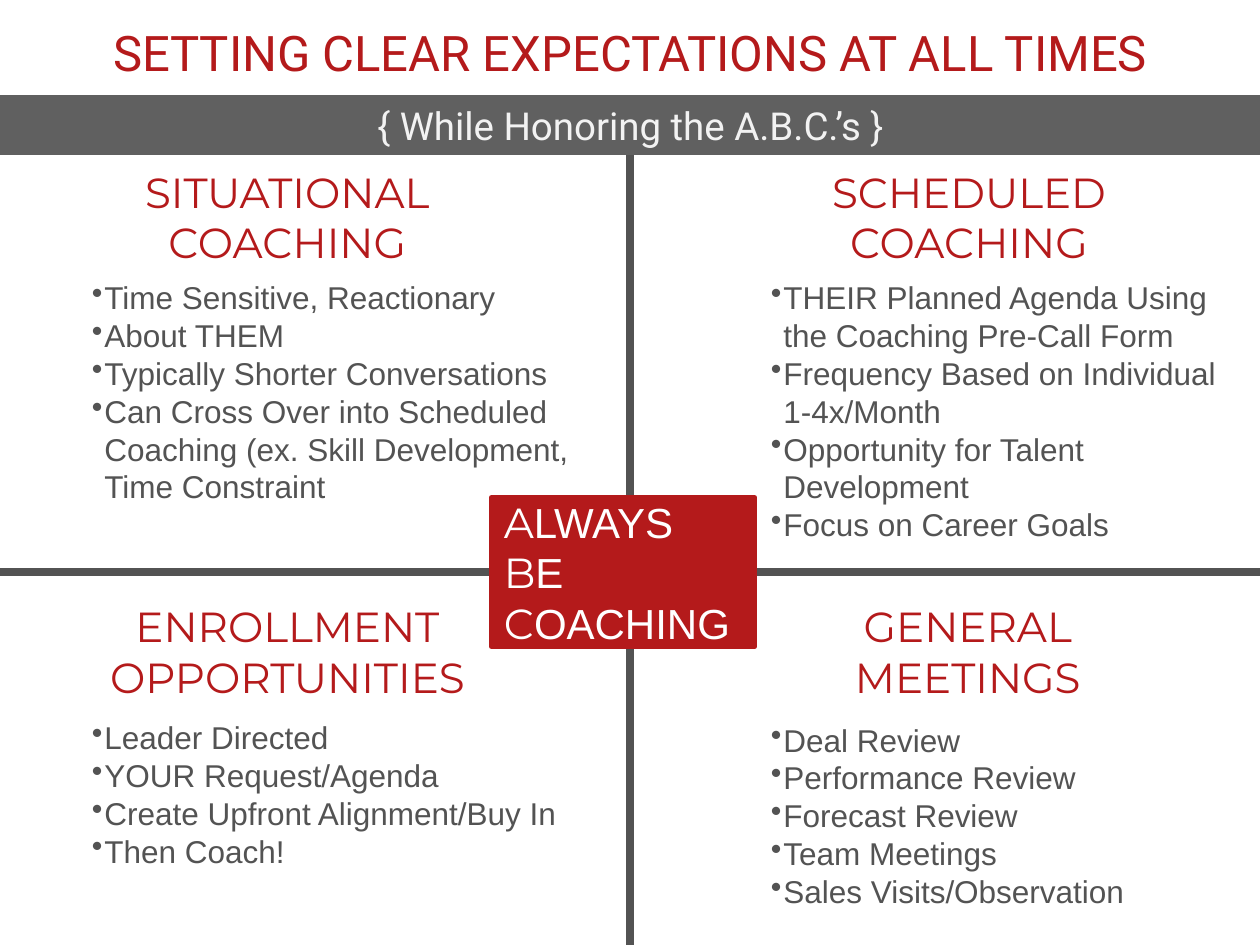
import lxml.etree
import pptx
import pptx.dml.color
import pptx.enum.shapes
import pptx.enum.text
import pptx.oxml.ns
import pptx.util
from dataclasses import dataclass

Pt = pptx.util.Pt
MSO_SHAPE = pptx.enum.shapes.MSO_SHAPE
ALIGN = pptx.enum.text.PP_ALIGN
ANCHOR = pptx.enum.text.MSO_ANCHOR
RGB = pptx.dml.color.RGBColor.from_string
qn = pptx.oxml.ns.qn


@dataclass(frozen=True)
class Theme:
    red: RGB = RGB("B41A1B")
    band: RGB = RGB("606060")
    gray: RGB = RGB("535353")
    pale: RGB = RGB("F2F2F2")
    white: RGB = RGB("FFFFFF")
    title: int = 28
    subtitle: int = 22
    heading: int = 24
    body: int = 18
    title_font: str = "Roboto"
    heading_font: str = "Montserrat"
    body_font: str = "Arial"


theme = Theme()
prs = pptx.Presentation()
prs.slide_width, prs.slide_height = Pt(720), Pt(540)
slide = prs.slides.add_slide(prs.slide_layouts[6])


def add_text(lines, *, box, size, color, font, align=ALIGN.CENTER, wrap=True, bullet=False):
    frame = slide.shapes.add_textbox(*map(Pt, box)).text_frame
    frame.word_wrap = wrap
    for index, line in enumerate(lines):
        paragraph = frame.paragraphs[0] if index == 0 else frame.add_paragraph()
        paragraph.alignment = align
        if bullet:
            paragraph.line_spacing = Pt(21.6)
            props = paragraph._p.get_or_add_pPr()
            props.set("marL", str(Pt(7.2)))
            props.set("indent", str(-Pt(7.9)))
            lxml.etree.SubElement(props, qn("a:buChar")).set("char", "•")
        run = paragraph.add_run()
        run.text = line
        run.font.size, run.font.name = Pt(size), font
        run.font.color.rgb = color


def add_panel(box, color, line_width):
    panel = slide.shapes.add_shape(MSO_SHAPE.RECTANGLE, *map(Pt, box))
    panel.shadow.inherit = False
    panel.fill.solid()
    panel.fill.fore_color.rgb = color
    panel.line.color.rgb = color
    panel.line.width = Pt(line_width)
    return panel


add_panel((0, 54.7, 720, 33.8), theme.band, 0.75)

for ends in [(720, 327, 0, 327), (360, 88.5, 360, 540)]:
    divider = slide.shapes.add_connector(pptx.enum.shapes.MSO_CONNECTOR.STRAIGHT, *map(Pt, ends))
    divider.line.color.rgb = theme.gray
    divider.line.width = Pt(4.75)
    lxml.etree.SubElement(divider._element.spPr, qn("a:effectLst"))

add_text(["SETTING CLEAR EXPECTATIONS AT ALL TIMES"], box=(0, 9.4, 720, 41),
         size=theme.title, color=theme.red, font=theme.title_font)
add_text(["{ While Honoring the A.B.C.’s }"], box=(105.8, 54.7, 509, 33.8),
         size=theme.subtitle, color=theme.pale, font=theme.title_font)

quadrants = [
    (["SITUATIONAL", "COACHING"], (65.5, 91.4, 197.3, 65.5), (45.4, 155.5, 326.2, 138.2),
     ["Time Sensitive, Reactionary", "About THEM", "Typically Shorter Conversations",
      "Can Cross Over into Scheduled Coaching (ex. Skill Development, Time Constraint"]),
    (["SCHEDULED", "COACHING"], (463.7, 91.4, 180, 65.5), (433.4, 155.5, 289.4, 159.8),
     ["THEIR Planned Agenda Using the Coaching Pre-Call Form",
      "Frequency Based on Individual 1-4x/Month",
      "Opportunity for Talent Development", "Focus on Career Goals"]),
    (["ENROLLMENT", "OPPORTUNITIES"], (45.4, 339.8, 237.6, 65.5), (45.4, 406.8, 326.2, 94.3),
     ["Leader Directed", "YOUR Request/Agenda", "Create Upfront Alignment/Buy In",
      "Then Coach!"]),
    (["GENERAL", "MEETINGS"], (474.5, 339.8, 157, 65.5), (433.4, 408.2, 326.2, 116.6),
     ["Deal Review", "Performance Review", "Forecast Review", "Team Meetings",
      "Sales Visits/Observation"]),
]
for heading, heading_box, points_box, points in quadrants:
    add_text(heading, box=heading_box, size=theme.heading, color=theme.red,
             font=theme.heading_font, wrap=False)
    add_text(points, box=points_box, size=theme.body, color=theme.gray,
             font=theme.body_font, align=ALIGN.LEFT, bullet=True)

motto = add_panel((280.8, 284.4, 150.5, 85), theme.red, 3).text_frame
motto.word_wrap = True
motto.vertical_anchor = ANCHOR.MIDDLE
for index, word in enumerate(["ALWAYS", "BE", "COACHING"]):
    motto_line = motto.paragraphs[0] if index == 0 else motto.add_paragraph()
    motto_line.alignment = ALIGN.LEFT
    for letters, font in [(word[0], theme.heading_font), (word[1:], theme.body_font)]:
        run = motto_line.add_run()
        run.text = letters
        run.font.size, run.font.name = Pt(theme.heading), font
        run.font.color.rgb = theme.white

prs.save("out.pptx")
